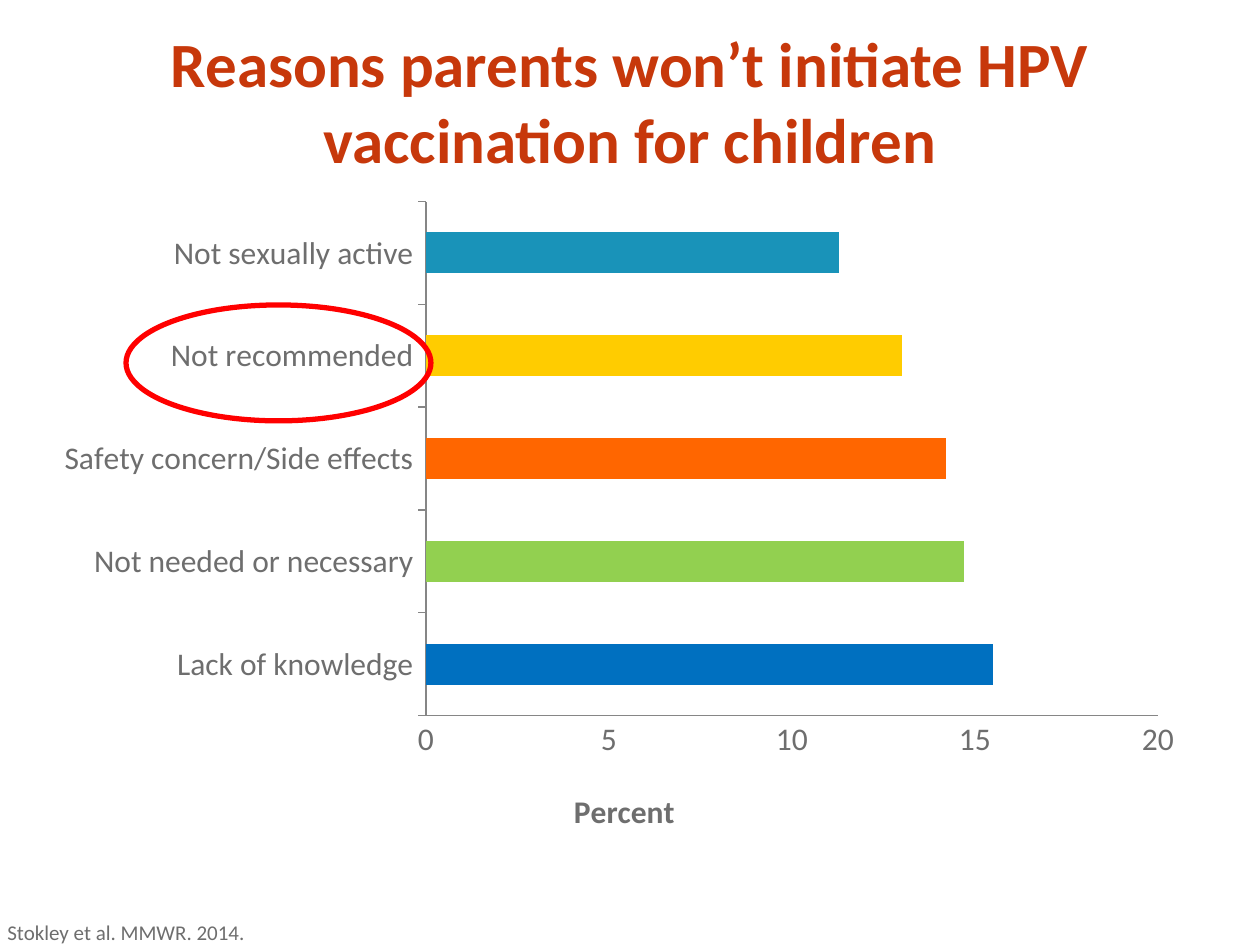
import dataclasses

import lxml.etree
import pptx
import pptx.chart.data
import pptx.dml.color
import pptx.enum.chart
import pptx.enum.shapes
import pptx.enum.text
import pptx.oxml
import pptx.oxml.ns
import pptx.util

Inches = pptx.util.Inches
Pt = pptx.util.Pt

FONT = "Calibri"
COLORS = {
    "title": "C7380B", "text": "6E6E6E", "axis": "868686", "ring": "FF0000",
    "blue": "0070C0", "green": "92D050", "orange": "FF6600",
    "yellow": "FFCC00", "teal": "1993B9",
}


@dataclasses.dataclass
class Box:
    left: float
    top: float
    width: float
    height: float

    def place(self) -> list:
        return [Inches(n) for n in dataclasses.astuple(self)]


@dataclasses.dataclass
class Reason:
    label: str
    share: float
    color: str


REASONS = [
    Reason("Lack of knowledge", 15.5, "blue"),
    Reason("Not needed or necessary", 14.7, "green"),
    Reason("Safety concern/Side effects", 14.2, "orange"),
    Reason("Not recommended", 13, "yellow"),
    Reason("Not sexually active", 11.3, "teal"),
]
CHART = Box(0.33, 1.5, 9.17, 5.25)
PLOT = Box(3.38, 1.6, 5.81, 4.08)


def rgb(name: str) -> pptx.dml.color.RGBColor:
    return pptx.dml.color.RGBColor.from_string(COLORS[name])


def style(font, size: float, color: str, bold: bool = False) -> None:
    font.name = FONT
    font.size = Pt(size)
    font.bold = bold
    font.color.rgb = rgb(color)


def add_text(slide, box: Box, text: str, size: float, color: str,
             bold: bool = False, center: bool = False) -> None:
    frame = slide.shapes.add_textbox(*box.place()).text_frame
    frame.word_wrap = True
    para = frame.paragraphs[0]
    para.text = text
    if center:
        frame.vertical_anchor = pptx.enum.text.MSO_ANCHOR.MIDDLE
        para.alignment = pptx.enum.text.PP_ALIGN.CENTER
    style(para.font, size, color, bold)


def make_layout(left: float, top: float, size: tuple = (), inner: bool = False):
    """Build a manual chart layout from slide positions in inches."""
    layout = pptx.oxml.parse_xml(
        f"<c:layout {pptx.oxml.ns.nsdecls('c')}><c:manualLayout/></c:layout>")
    parts = [("layoutTarget", "inner")] if inner else []
    parts += [("xMode", "edge"), ("yMode", "edge"),
              ("x", (left - CHART.left) / CHART.width),
              ("y", (top - CHART.top) / CHART.height)]
    if size:
        parts += [("w", size[0] / CHART.width), ("h", size[1] / CHART.height)]
    for tag, val in parts:
        node = lxml.etree.SubElement(layout[0], pptx.oxml.ns.qn(f"c:{tag}"))
        node.set("val", str(val))
    return layout


def set_layout(parent, index: int, layout) -> None:
    for old in parent.findall(pptx.oxml.ns.qn("c:layout")):
        parent.remove(old)
    parent.insert(index, layout)


def add_chart(slide) -> None:
    data = pptx.chart.data.CategoryChartData()
    data.categories = [reason.label for reason in REASONS]
    data.add_series("Series 1", [reason.share for reason in REASONS])
    kind = pptx.enum.chart.XL_CHART_TYPE.BAR_CLUSTERED
    chart = slide.shapes.add_chart(kind, *CHART.place(), data).chart
    chart.has_legend = False
    chart.has_title = False
    style(chart.font, 18, "text")

    plot = chart.plots[0]
    plot.gap_width = 150
    plot.vary_by_categories = False
    for index, reason in enumerate(REASONS):
        fill = plot.series[0].points[index].format.fill
        fill.solid()
        fill.fore_color.rgb = rgb(reason.color)

    ticks = pptx.enum.chart.XL_TICK_MARK
    cats, values = chart.category_axis, chart.value_axis
    for axis, mark in ((cats, ticks.OUTSIDE), (values, ticks.NONE)):
        axis.has_major_gridlines = False
        axis.major_tick_mark = mark
        axis.minor_tick_mark = ticks.NONE
        axis.format.line.color.rgb = rgb("axis")
        axis.format.line.width = Pt(0.75)
        style(axis.tick_labels.font, 18, "text")
    values.minimum_scale = 0
    values.maximum_scale = 20
    values.major_unit = 5

    title = values.axis_title
    para = title.text_frame.paragraphs[0]
    para.text = "Percent"
    style(para.font, 18, "text", bold=True)
    set_layout(title._element, 1, make_layout(4.51, 6.22))
    area = chart._chartSpace.chart.plotArea
    set_layout(area, 0, make_layout(
        PLOT.left, PLOT.top, (PLOT.width, PLOT.height), inner=True))


def add_ring(slide, box: Box) -> None:
    oval = pptx.enum.shapes.MSO_SHAPE.OVAL
    ring = slide.shapes.add_shape(oval, *box.place())
    ring.shadow.inherit = False
    ring.fill.background()
    ring.line.color.rgb = rgb("ring")
    ring.line.width = Pt(3)


def main() -> None:
    deck = pptx.Presentation()
    deck.slide_width = Inches(10)
    deck.slide_height = Inches(7.5)
    slide = deck.slides.add_slide(deck.slide_layouts[6])
    add_text(slide, Box(0.5, 0.17, 9, 1.25),
             "Reasons parents won’t initiate HPV vaccination for children",
             36, "title", bold=True, center=True)
    add_chart(slide)
    add_ring(slide, Box(1, 2.42, 2.42, 0.92))
    add_text(slide, Box(-0.04, 7.25, 3.08, 0.25),
             "Stokley et al. MMWR. 2014.", 12, "text")
    deck.save("out.pptx")


if __name__ == "__main__":
    main()
